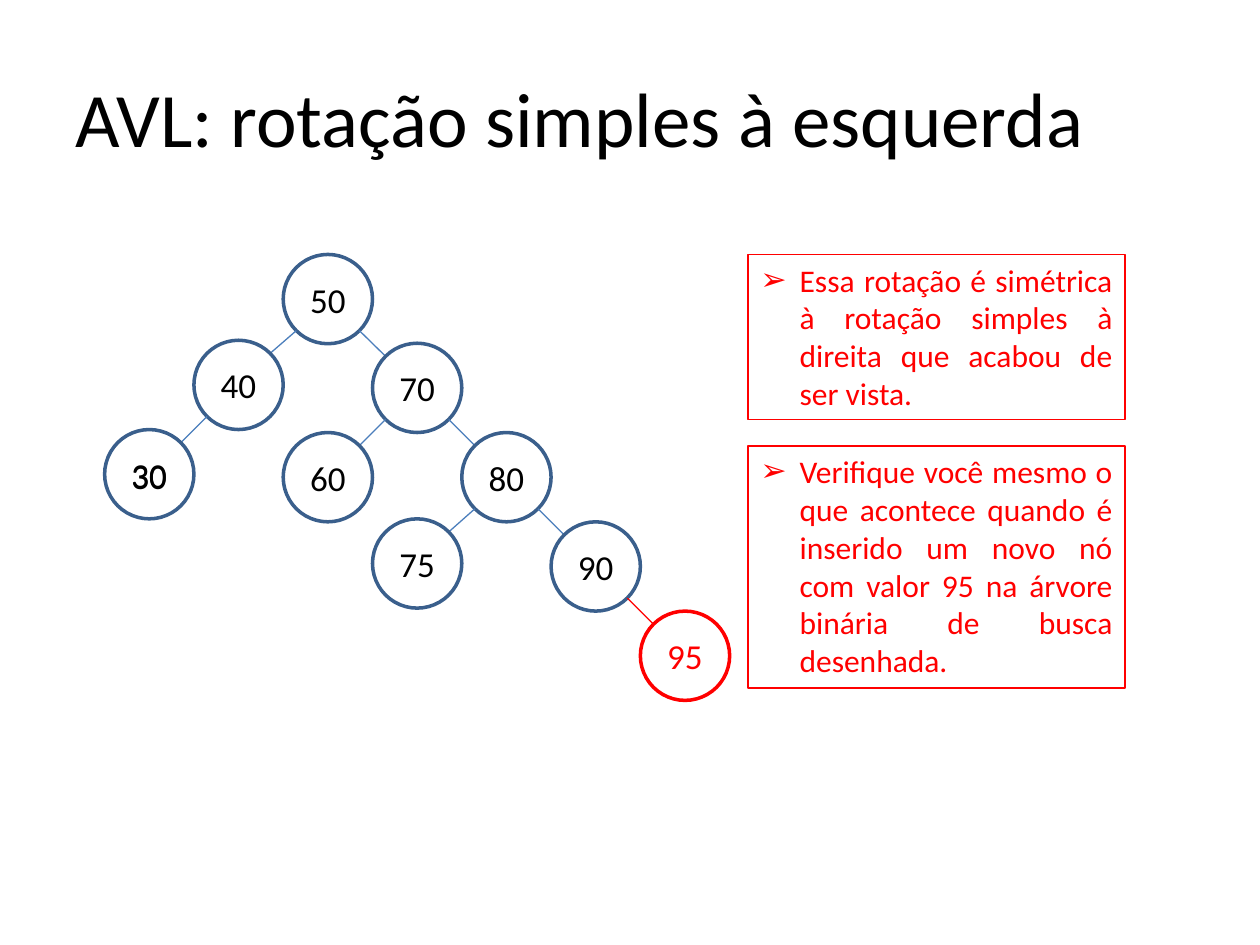
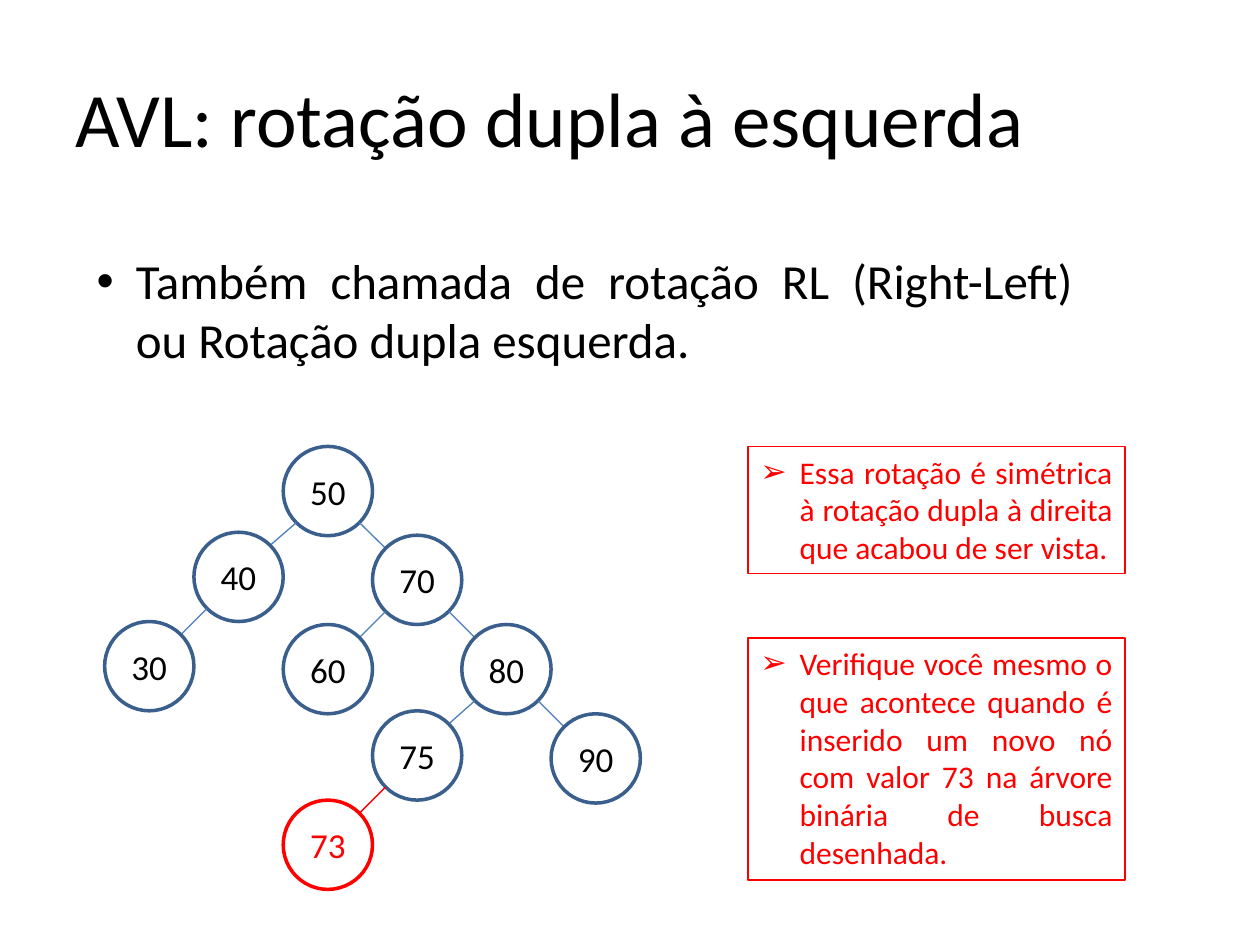
import math

from lxml import etree
from pptx import Presentation, util as u
from pptx.dml.color import RGBColor
from pptx.enum import shapes, text
from pptx.oxml.ns import qn

# Shared style
FONT = "Calibri"
BLACK, RED = "000000", "FF0000"
NODE_BLUE, EDGE_BLUE = "3A5F8C", "4B7EBC"

# Tree grid in centimetres
NODE_SIZE = 1.8
TREE_LEFT = 2.11
NOTE_LEFT, NOTE_WIDTH = 15.08, 7.6

# value: (column, drop below the root, parent)
TREE = {
    50: (2, 0, None),
    40: (1, 1.73, 50),
    70: (3, 1.79, 50),
    30: (0, 3.53, 40),
    60: (2, 3.59, 70),
    80: (4, 3.59, 70),
    75: (3, 5.33, 80),
    90: (5, 5.39, 80),
}


def color(hex_string):
    return RGBColor.from_string(hex_string)


class Deck:
    def __init__(self):
        self.presentation = Presentation()
        self.presentation.slide_width = u.Cm(25.4)
        self.presentation.slide_height = u.Cm(19.05)
        self.slide = None

    def new_slide(self, title):
        self.slide = self.presentation.slides.add_slide(self.presentation.slide_layouts[6])
        box = self.slide.shapes.add_textbox(u.Cm(1.27), u.Cm(0.76), u.Cm(22.86), u.Cm(3.18))
        box.text_frame.vertical_anchor = text.MSO_ANCHOR.MIDDLE
        self.set_text(box, title, 44, BLACK, text.PP_ALIGN.LEFT)

    def set_text(self, shape, words, size, hex_color, align):
        shape.text_frame.word_wrap = True
        paragraph = shape.text_frame.paragraphs[0]
        paragraph.text = words
        paragraph.alignment = align
        paragraph.font.name = FONT
        paragraph.font.size = u.Pt(size)
        paragraph.font.color.rgb = color(hex_color)
        return paragraph

    def bullet(self, box, words, mark, size, hex_color):
        box.text_frame.vertical_anchor = text.MSO_ANCHOR.TOP
        paragraph = self.set_text(box, words, size, hex_color, text.PP_ALIGN.JUSTIFY)
        properties = paragraph._p.get_or_add_pPr()
        indent = u.Cm(0.79)
        properties.set("marL", str(indent))
        properties.set("indent", str(-indent))
        # Bullet elements come before the default run properties
        font = etree.Element(qn("a:buFont"), typeface="Arial")
        character = etree.Element(qn("a:buChar"), char=mark)
        properties.insert(0, font)
        font.addnext(character)

    def shape(self, kind, left, top, width, height, line_color, line_width):
        shape = self.slide.shapes.add_shape(kind, u.Cm(left), u.Cm(top), u.Cm(width), u.Cm(height))
        shape.shadow.inherit = False
        shape.fill.background()
        if line_color:
            shape.line.color.rgb = color(line_color)
            shape.line.width = u.Pt(line_width)
        else:
            shape.line.fill.background()
        return shape

    def statement(self, words, top):
        box = self.slide.shapes.add_textbox(u.Cm(1.7), u.Cm(top), u.Cm(20.17), u.Cm(2.64))
        self.bullet(box, words, "•", 28, BLACK)

    def note(self, words, top, height):
        box = self.shape(shapes.MSO_SHAPE.RECTANGLE, NOTE_LEFT, top, NOTE_WIDTH, height, RED, 0.75)
        self.bullet(box, words, "➢", 18, RED)

    def node(self, value, column, top, line_color=NODE_BLUE, text_color=BLACK):
        circle = self.shape(shapes.MSO_SHAPE.OVAL, TREE_LEFT + column * NODE_SIZE, top,
                            NODE_SIZE, NODE_SIZE, line_color, 2)
        frame = circle.text_frame
        frame.margin_left = frame.margin_right = 0
        frame.vertical_anchor = text.MSO_ANCHOR.MIDDLE
        self.set_text(circle, str(value), 20, text_color, text.PP_ALIGN.CENTER)

    def edge(self, parent, child, line_color):
        """Joins the facing diagonal points of two (column, top) circles."""
        radius = NODE_SIZE / 2
        reach = radius * math.sqrt(0.5)
        side = 1 if child[0] > parent[0] else -1
        ends = []
        for (column, top), sign in ((parent, 1), (child, -1)):
            ends.append(u.Cm(TREE_LEFT + column * NODE_SIZE + radius + sign * side * reach))
            ends.append(u.Cm(top + radius + sign * reach))
        line = self.slide.shapes.add_connector(shapes.MSO_CONNECTOR.STRAIGHT, *ends)
        line.line.color.rgb = color(line_color)
        line.line.width = u.Pt(0.75)
        etree.SubElement(line._element.spPr, qn("a:effectLst"))

    def tree(self, top, inserted, place):
        nodes = {**TREE, inserted: place}
        spots = {value: (column, top + drop) for value, (column, drop, _) in nodes.items()}
        for value, (_, _, parent) in nodes.items():
            is_new = value == inserted
            if parent:
                self.edge(spots[parent], spots[value], RED if is_new else EDGE_BLUE)
            self.node(value, *spots[value], RED if is_new else NODE_BLUE, RED if is_new else BLACK)


def exercise(value):
    return (f"Verifique você mesmo o que acontece quando é inserido um novo nó "
            f"com valor {value} na árvore binária de busca desenhada.")


def main():
    deck = Deck()

    # Single left rotation
    top = 5.13
    deck.new_slide("AVL: rotação simples à esquerda")
    deck.tree(top, 95, (6, 7.19, 90))
    deck.node(30, 0, top + 3.56, line_color=None)
    deck.note("Essa rotação é simétrica à rotação simples à direita que acabou de ser vista.",
              top, 3.33)
    deck.note(exercise(95), top + 3.86, 4.88)

    # Double left rotation
    top = 9
    deck.new_slide("AVL: rotação dupla à esquerda")
    deck.tree(top, 73, (2, 7.13, 75))
    deck.note("Essa rotação é simétrica à rotação dupla à direita que acabou de ser vista.",
              top, 2.57)
    deck.note(exercise(73), top + 3.86, 4.88)
    deck.statement("Também chamada de rotação RL (Right-Left) ou Rotação dupla esquerda.", 4.93)

    deck.presentation.save("out.pptx")


if __name__ == "__main__":
    main()
